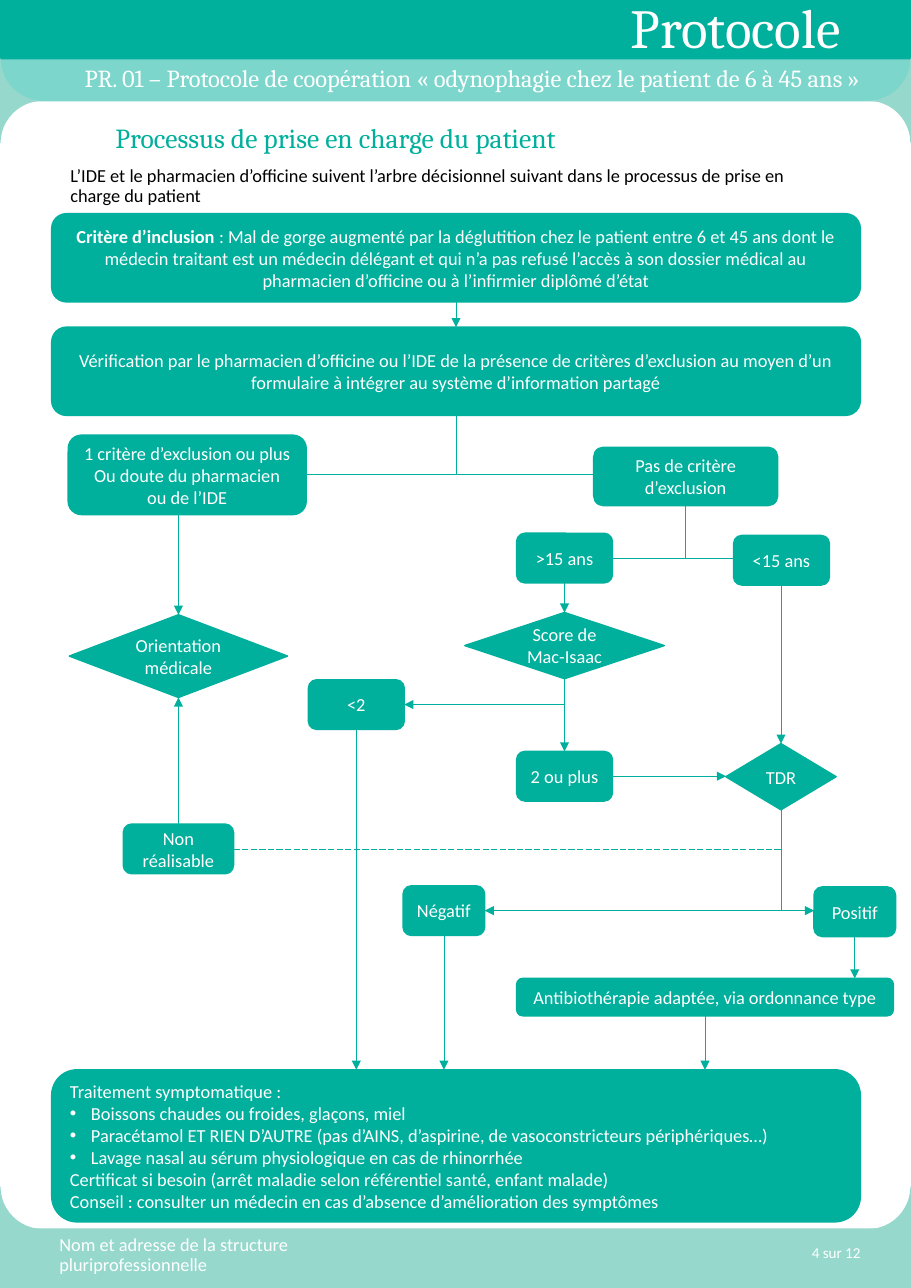
from dataclasses import dataclass

from lxml.etree import SubElement
from pptx import Presentation
from pptx.dml.color import RGBColor
from pptx.enum.dml import MSO_LINE
from pptx.enum.shapes import MSO_CONNECTOR, MSO_SHAPE
from pptx.enum.text import MSO_ANCHOR, PP_ALIGN
from pptx.oxml.ns import qn
from pptx.util import Inches, Pt


@dataclass(frozen=True)
class Theme:
    teal: str = "00AF9C"
    mint: str = "97D8CD"
    white: str = "FFFFFF"
    black: str = "000000"
    serif: str = "Cambria"
    sans: str = "Calibri"
    banner: float = 36
    heading: float = 18
    title: float = 16
    body: float = 12
    page: float = 9.9
    outline: float = 1
    link: float = 0.5


@dataclass
class Box:
    left: float
    top: float
    width: float
    height: float
    paras: tuple
    kind: MSO_SHAPE = MSO_SHAPE.ROUNDED_RECTANGLE
    align: PP_ALIGN = PP_ALIGN.CENTER

    @property
    def right(self):
        return self.left + self.width

    @property
    def bottom(self):
        return self.top + self.height

    @property
    def cx(self):
        return self.left + self.width / 2

    @property
    def cy(self):
        return self.top + self.height / 2


THEME = Theme()
COLS, ROWS = 82.7, 116.9  # square grid cells of a tenth of an inch
WIDE = 73.4
MARGIN = 4.7
DIAMOND = MSO_SHAPE.DIAMOND
BULLET = "• "

BOXES = {
    "inclusion": Box(MARGIN, 19.4, WIDE, 8, ((
        ("Critère d’inclusion ", True),
        (": Mal de gorge augmenté par la déglutition chez le patient entre 6 et 45 ans "
         "dont le médecin traitant est un médecin délégant et qui n’a pas refusé l’accès "
         "à son dossier médical au pharmacien d’officine ou à l’infirmier diplômé d’état",
         False)),)),
    "check": Box(MARGIN, 29.7, WIDE, 8, (
        "Vérification par le pharmacien d’officine ou l’IDE de la présence de critères "
        "d’exclusion au moyen d’un formulaire à intégrer au système d’information partagé",)),
    "excluded": Box(6.2, 39.5, 21.6, 7.2, (
        "1 critère d’exclusion ou plus", "Ou doute du pharmacien ou de l’IDE")),
    "eligible": Box(53.9, 40.6, 16.7, 5.3, ("Pas de critère d’exclusion",)),
    "over15": Box(46.9, 48.4, 8.7, 4.5, (">15 ans",)),
    "under15": Box(66.6, 48.6, 8.7, 4.5, ("<15 ans",)),
    "score": Box(42.2, 55.6, 18.1, 6, ("Score de Mac-Isaac",), DIAMOND),
    "referral": Box(6.3, 55.8, 19.8, 7.5, ("Orientation médicale",), DIAMOND),
    "low": Box(28, 61.7, 8.7, 4.5, ("<2",)),
    "high": Box(46.9, 68.2, 8.7, 4.5, ("2 ou plus",)),
    "test": Box(65.9, 67.5, 10, 6, ("TDR",), DIAMOND),
    "unfeasible": Box(11.2, 74.8, 10, 4.5, ("Non réalisable",)),
    "negative": Box(36.6, 80.4, 7.4, 4.5, ("Négatif",)),
    "positive": Box(73.9, 80.5, 7.4, 4.5, ("Positif",)),
    "antibiotic": Box(46.9, 88.8, 34.2, 3.4,
                      ("Antibiothérapie adaptée, via ordonnance type",)),
    "treatment": Box(MARGIN, 97.1, WIDE, 13.8, (
        "Traitement symptomatique :",
        BULLET + "Boissons chaudes ou froides, glaçons, miel",
        BULLET + "Paracétamol ET RIEN D’AUTRE (pas d’AINS, d’aspirine, "
                 "de vasoconstricteurs périphériques…)",
        BULLET + "Lavage nasal au sérum physiologique en cas de rhinorrhée",
        "Certificat si besoin (arrêt maladie selon référentiel santé, enfant malade)",
        "Conseil : consulter un médecin en cas d’absence d’amélioration des symptômes"),
        align=PP_ALIGN.LEFT),
}


def cells(*values):
    return [Inches(v / 10) for v in values]


def rgb(value):
    return RGBColor.from_string(value)


def style(target, formats):
    for name, value in formats.items():
        setattr(target, name, value)


def set_indent(p, left, bullet=False):
    pPr = p._p.get_or_add_pPr()
    pPr.set("marL", str(left))
    pPr.set("indent", str(-left if bullet else 0))
    if bullet:
        SubElement(pPr, qn("a:buFont")).set("typeface", "Arial")
        SubElement(pPr, qn("a:buChar")).set("char", BULLET.strip())


def write(p, content, size, color, font=THEME.sans, **formats):
    """Fill a paragraph from a string or from (text, bold) runs."""
    runs = ((content, False),) if isinstance(content, str) else content
    style(p, formats)
    for text, bold in runs:
        r = p.add_run()
        r.text = text
        style(r.font, {"size": Pt(size), "name": font, "bold": bold})
        r.font.color.rgb = rgb(color)


def add_block(s, kind, area, color):
    sp = s.shapes.add_shape(kind, *cells(*area))
    sp.shadow.inherit = False
    sp.fill.solid()
    sp.fill.fore_color.rgb = rgb(color)
    sp.line.fill.background()
    return sp


def add_text(s, area, anchor=MSO_ANCHOR.TOP):
    tf = s.shapes.add_textbox(*cells(*area)).text_frame
    style(tf, {"word_wrap": True, "vertical_anchor": anchor})
    return tf


def add_box(s, box):
    sp = add_block(s, box.kind, (box.left, box.top, box.width, box.height), THEME.teal)
    sp.line.color.rgb = rgb(THEME.teal)
    sp.line.width = Pt(THEME.outline)
    tf = sp.text_frame
    style(tf, {"word_wrap": True, "vertical_anchor": MSO_ANCHOR.MIDDLE})
    if box.kind == DIAMOND:
        style(tf, {"margin_left": Inches(0.05), "margin_right": Inches(0.05)})
    for i, content in enumerate(box.paras):
        p = tf.add_paragraph() if i else tf.paragraphs[0]
        if isinstance(content, str) and content.startswith(BULLET):
            set_indent(p, Inches(0.19), bullet=True)
            content = content.removeprefix(BULLET)
        write(p, content, THEME.body, THEME.white, alignment=box.align)


def add_link(s, x1, y1, x2, y2, ends="", dashed=False):
    """Draw a line; ends names the arrowheads: "tail" at its end, "head" at its start."""
    cxn = s.shapes.add_connector(MSO_CONNECTOR.STRAIGHT, *cells(x1, y1, x2, y2))
    cxn.line.color.rgb = rgb(THEME.teal)
    cxn.line.width = Pt(THEME.link)
    if dashed:
        cxn.line.dash_style = MSO_LINE.LONG_DASH
    for end in ends.split():
        SubElement(cxn.line._get_or_add_ln(), qn(f"a:{end}End")).set("type", "triangle")
    SubElement(cxn._element.spPr, qn("a:effectLst"))


def add_frame(s):
    band = add_block(s, MSO_SHAPE.RECTANGLE, (0, 4.9, COLS, 4.3), THEME.teal)
    color = band.fill._xPr.find(qn("a:solidFill"))[0]
    SubElement(color, qn("a:alpha")).set("val", "51000")
    add_block(s, MSO_SHAPE.RECTANGLE, (0, 0, COLS, 5.4), THEME.teal)
    add_block(s, MSO_SHAPE.RECTANGLE, (0, 111.5, COLS, 5.4), THEME.mint)
    for top in (5.3, 107.7):
        for left in (-4.4, 78.8):
            corner = add_block(s, MSO_SHAPE.PLAQUE, (left, top, 8.3, 7.7), THEME.mint)
            corner.adjustments[0] = 0.5


def add_texts(s):
    t, middle = THEME, MSO_ANCHOR.MIDDLE
    write(add_text(s, (56.3, -1.1, 26.4, 7.1)).paragraphs[0],
          "Protocole", t.banner, t.white, t.serif)
    write(add_text(s, (0, 5.2, 79.1, 4), middle).paragraphs[0],
          "PR. 01 – Protocole de coopération « odynophagie chez le patient de 6 à 45 ans »",
          t.title, t.white, t.serif, alignment=PP_ALIGN.RIGHT, line_spacing=0.9)
    tf = add_text(s, (5.4, 10.8, 71.3, 8.2))
    set_indent(tf.paragraphs[0], Inches(0.41))
    write(tf.paragraphs[0], "Processus de prise en charge du patient",
          t.heading, t.teal, t.serif, line_spacing=0.9)
    write(tf.add_paragraph(),
          "L’IDE et le pharmacien d’officine suivent l’arbre décisionnel suivant dans le "
          "processus de prise en charge du patient",
          t.body, t.black, line_spacing=0.9, space_before=Pt(8.3))
    write(add_text(s, (4.4, 111.7, 27, 4.8)).paragraphs[0],
          "Nom et adresse de la structure pluriprofessionnelle",
          t.body, t.white, line_spacing=0.9)
    write(add_text(s, (61, 112.1, 18.1, 3.1), middle).paragraphs[0],
          "4 sur 12", t.page, t.white, alignment=PP_ALIGN.RIGHT)


def add_links(s, b):
    for upper, lower, axis in (
            ("inclusion", "check", "inclusion"), ("excluded", "referral", "referral"),
            ("over15", "score", "score"), ("score", "high", "score"),
            ("under15", "test", "test"), ("positive", "antibiotic", "positive"),
            ("low", "treatment", "low"), ("negative", "treatment", "negative"),
            ("antibiotic", "treatment", "antibiotic")):
        add_link(s, b[axis].cx, b[upper].bottom, b[axis].cx, b[lower].top, "tail")
    for parent, branch in (("check", "excluded"), ("eligible", "over15"),
                           ("test", "negative")):
        add_link(s, b[parent].cx, b[parent].bottom, b[parent].cx, b[branch].cy)
    for left, right, ends in (("excluded", "eligible", ""), ("over15", "under15", ""),
                              ("high", "test", "tail"),
                              ("negative", "positive", "head tail")):
        add_link(s, b[left].right, b[left].cy, b[right].left, b[left].cy, ends)
    low, last = b["low"], b["unfeasible"]
    add_link(s, b["score"].cx, low.cy, low.right, low.cy, "tail")
    add_link(s, last.cx, last.top, last.cx, b["referral"].bottom, "tail")
    add_link(s, last.right, last.cy, b["test"].cx, last.cy, dashed=True)


def main():
    prs = Presentation()
    prs.slide_width, prs.slide_height = cells(COLS, ROWS)
    s = prs.slides.add_slide(prs.slide_layouts[6])
    add_frame(s)
    add_texts(s)
    for box in BOXES.values():
        add_box(s, box)
    add_links(s, BOXES)
    prs.save("out.pptx")


if __name__ == "__main__":
    main()
